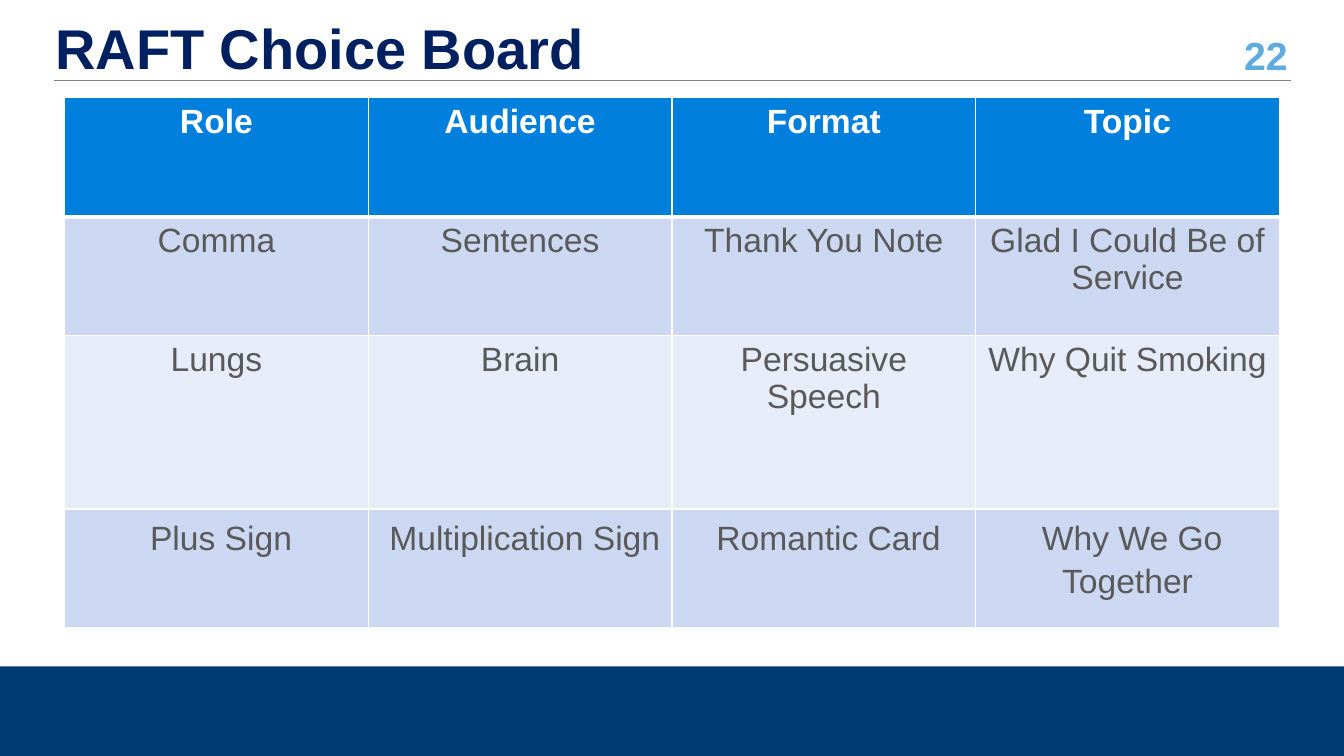
from lxml import etree
from pptx import Presentation
from pptx.dml.color import RGBColor
from pptx.enum.shapes import MSO_CONNECTOR as CONN, MSO_SHAPE as SHAPE
from pptx.enum.text import MSO_ANCHOR as ANCHOR, PP_ALIGN as ALIGN
from pptx.oxml import parse_xml
from pptx.oxml.ns import nsdecls, qn
from pptx.util import Inches, Pt

NAVY = RGBColor(0x00, 0x20, 0x60)
BAND = RGBColor(0x00, 0x3B, 0x71)
SKY = RGBColor(0x5F, 0xAA, 0xDE)
BLUE = RGBColor(0x00, 0x7F, 0xDC)
PALE = RGBColor(0xCC, 0xD8, 0xF2)
PALER = RGBColor(0xE7, 0xEC, 0xF9)
GRAY = RGBColor(0x59, 0x59, 0x59)
RULE = RGBColor(0x80, 0x80, 0x80)
WHITE = RGBColor(0xFF, 0xFF, 0xFF)

TITLE = {"size": Pt(40), "bold": True, "color": NAVY}
NUMBER = {"size": Pt(28), "bold": True, "color": SKY}
HEAD = {"size": Pt(24), "bold": True, "color": WHITE}
BODY = {"size": Pt(24), "bold": False, "color": GRAY}

ROWS = [
    ("Role", "Audience", "Format", "Topic"),
    ("Comma", "Sentences", "Thank You Note", "Glad I Could Be of Service"),
    ("Lungs", "Brain", "Persuasive Speech", "Why Quit Smoking"),
    (" Plus Sign", " Multiplication Sign", " Romantic Card", " Why We Go Together"),
]
ROW_FILLS = [BLUE, PALE, PALER, PALE]
ROW_HEIGHTS = [1.18, 1.18, 1.72, 1.18]
ROW_SPACING = [None, None, None, 1.15]


def write(tf, text, fmt, align, spacing=None):
    p = tf.paragraphs[0]
    p.alignment = align
    p.line_spacing = spacing
    r = p.add_run()
    r.text = text
    r.font.name = "Arial"
    for name, value in fmt.items():
        if name == "color":
            r.font.color.rgb = value
        else:
            setattr(r.font, name, value)


def add_label(slide, box, text, fmt, align, spacing=None):
    tf = slide.shapes.add_textbox(*map(Inches, box)).text_frame
    tf.word_wrap = True
    tf.vertical_anchor = ANCHOR.MIDDLE
    write(tf, text, fmt, align, spacing)


def add_header(slide, left, top, width):
    add_label(slide, (left - 0.09, top, 11.6, 0.42), "RAFT Choice Board",
              TITLE, ALIGN.LEFT, 0.9)
    add_label(slide, (left + width - 0.73, top + 0.03, 0.8, 0.42), "22",
              NUMBER, ALIGN.RIGHT)
    y = Inches(top + 0.5)
    rule = slide.shapes.add_connector(
        CONN.STRAIGHT, Inches(left + width), y, Inches(left), y)
    rule.line.color.rgb = RULE
    rule.line.width = Pt(0.5)
    etree.SubElement(rule._element.spPr, qn("a:effectLst"))


def set_borders(cell, **widths):
    tc_pr = cell._tc.get_or_add_tcPr()
    for i, side in enumerate("LRTB"):
        tc_pr.insert(i, parse_xml(
            f'<a:ln{side} {nsdecls("a")} w="{Pt(widths.get(side, 1))}">'
            f'<a:solidFill><a:srgbClr val="{WHITE}"/></a:solidFill></a:ln{side}>'))


def add_board(slide, left, top, width):
    box = map(Inches, (left, top, width, sum(ROW_HEIGHTS)))
    table = slide.shapes.add_table(len(ROWS), len(ROWS[0]), *box).table
    for i, texts in enumerate(ROWS):
        table.rows[i].height = Inches(ROW_HEIGHTS[i])
        for j, text in enumerate(texts):
            cell = table.cell(i, j)
            cell.fill.solid()
            cell.fill.fore_color.rgb = ROW_FILLS[i]
            set_borders(cell, T=3 if i == 1 else 1, B=3 if i == 0 else 1)
            write(cell.text_frame, text, BODY if i else HEAD,
                  ALIGN.CENTER, ROW_SPACING[i])


def add_footer(slide, left, top, width, height):
    sp = slide.shapes.add_shape(
        SHAPE.RECTANGLE, *map(Inches, (left, top, width, height)))
    sp.shadow.inherit = False
    sp.fill.solid()
    sp.fill.fore_color.rgb = BAND
    sp.line.fill.background()


def main():
    prs = Presentation()
    prs.slide_width, prs.slide_height = Inches(13.33), Inches(7.5)
    slide = prs.slides.add_slide(prs.slide_layouts[6])
    add_footer(slide, -0.01, 6.61, 13.34, 0.95)
    add_header(slide, 0.54, 0.3, 12.26)
    add_board(slide, 0.64, 0.97, 12.05)
    prs.save("out.pptx")


if __name__ == "__main__":
    main()
